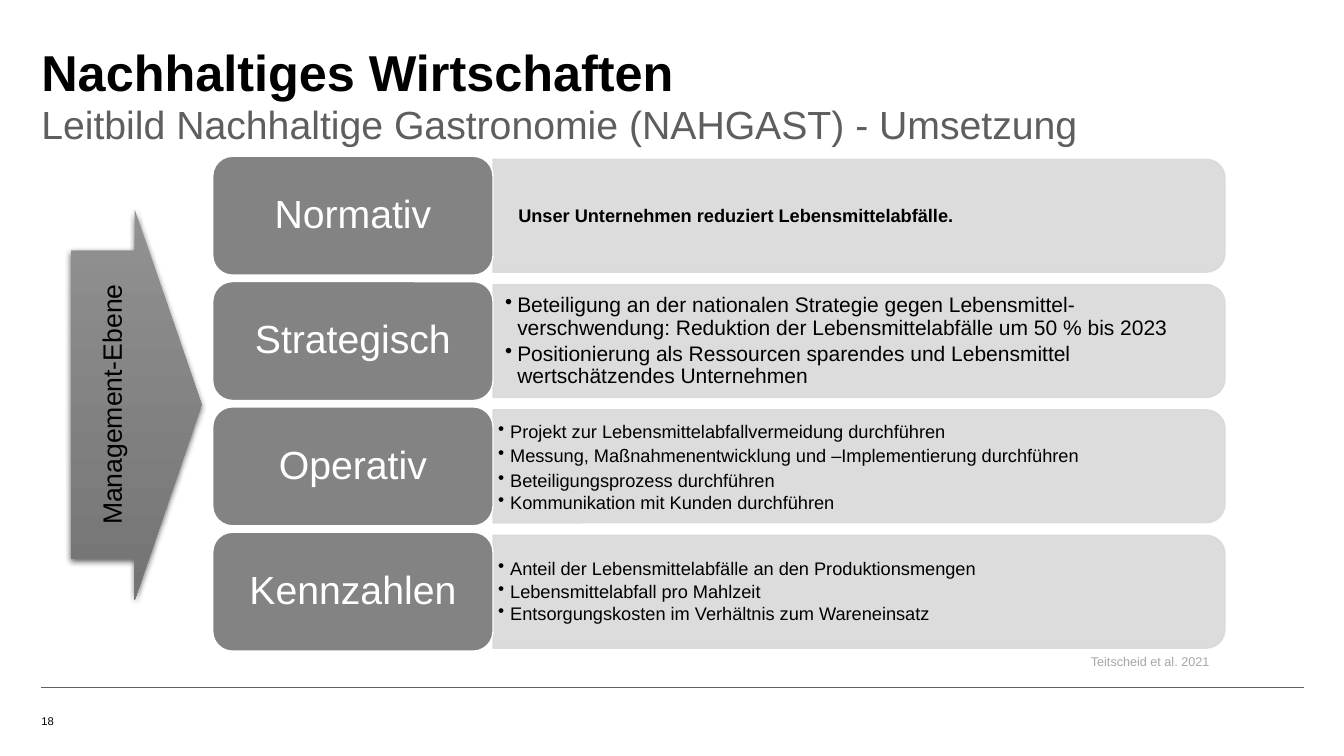
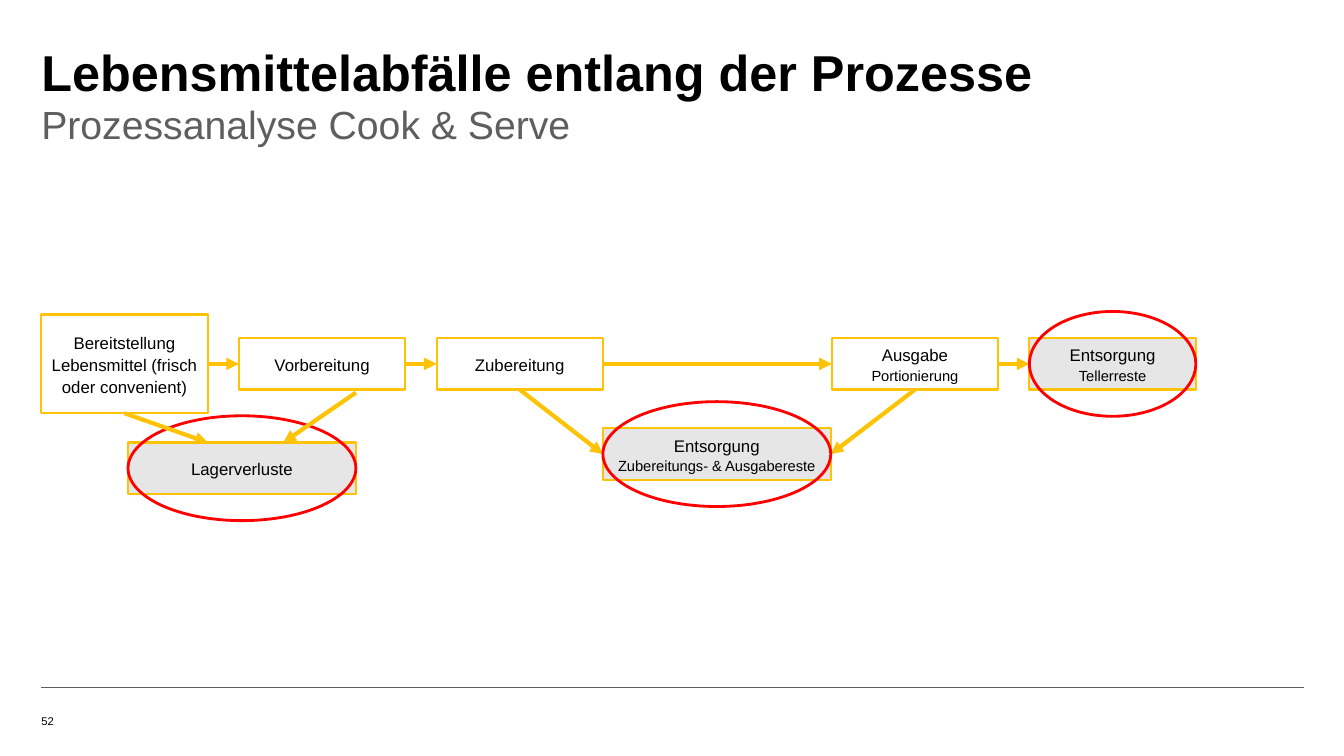
from dataclasses import dataclass

from lxml.etree import SubElement
from pptx import Presentation
from pptx.dml.color import RGBColor
from pptx.enum.shapes import MSO_CONNECTOR, MSO_SHAPE
from pptx.enum.text import MSO_ANCHOR, PP_ALIGN
from pptx.oxml.ns import qn
from pptx.util import Inches, Pt


@dataclass(frozen=True)
class Theme:
    font: str = "Arial"
    black: str = "000000"
    white: str = "FFFFFF"
    subtitle_grey: str = "5E5E5E"
    label_grey: str = "838383"
    panel_grey: str = "D9D9D9"
    waste_grey: str = "E6E6E6"
    source_grey: str = "A6A6A6"
    arrow_top: str = "919191"
    arrow_bottom: str = "747474"
    yellow: str = "FEC306"
    red: str = "FF0000"
    title_size: float = 36
    subtitle_size: float = 28
    label_size: float = 28
    arrow_size: float = 19
    large_size: float = 15
    body_size: float = 13
    step_size: float = 12
    detail_size: float = 10.5
    source_size: float = 9
    number_size: float = 8


THEME = Theme()
NO_INSET = (0, 0)


@dataclass(frozen=True)
class Box:
    left: float
    top: float
    width: float
    height: float

    @property
    def right(self):
        return self.left + self.width

    @property
    def bottom(self):
        return self.top + self.height

    @property
    def center(self):
        return self.left + self.width / 2

    @property
    def middle(self):
        return self.top + self.height / 2

    def inner(self, left, top, width, height):
        return Box(self.left + left, self.top + top, width, height)

    def lengths(self):
        return [Inches(n) for n in (self.left, self.top, self.width, self.height)]


@dataclass(frozen=True)
class Level:
    name: str
    points: tuple
    size: float = THEME.body_size
    bold: bool = False
    bullet: str = "•"
    indent: float = 0.12
    inset: tuple = (0.05, 0.03)
    spacing: float = 0.9


LEVELS = (
    Level("Normativ", ("Unser Unternehmen reduziert Lebensmittelabfälle.",),
          bold=True, bullet="", indent=0.2),
    Level("Strategisch", (
        "Beteiligung an der nationalen Strategie gegen Lebensmittel-verschwendung: "
        "Reduktion der Lebensmittelabfälle um 50 % bis 2023",
        "Positionierung als Ressourcen sparendes und Lebensmittel wertschätzendes Unternehmen",
    ), size=THEME.large_size, inset=(0.12, 0.06)),
    Level("Operativ", (
        "Projekt zur Lebensmittelabfallvermeidung durchführen",
        "Messung, Maßnahmenentwicklung und –Implementierung durchführen",
        "Beteiligungsprozess durchführen",
        "Kommunikation mit Kunden durchführen",
    ), spacing=1.0),
    Level("Kennzahlen", (
        "Anteil der Lebensmittelabfälle an den Produktionsmengen",
        "Lebensmittelabfall pro Mahlzeit",
        "Entsorgungskosten im Verhältnis zum Wareneinsatz",
    )),
)


def write(frame, paragraphs, *, size, color=THEME.black, bold=False, align=PP_ALIGN.LEFT,
          anchor=MSO_ANCHOR.TOP, inset=(0.1, 0.05), spacing=1.0, after=0,
          indent=0, bullet="", detail_size=None):
    frame.word_wrap = True
    frame.vertical_anchor = anchor
    frame.margin_left = frame.margin_right = Inches(inset[0])
    frame.margin_top = frame.margin_bottom = Inches(inset[1])
    for index, content in enumerate(paragraphs):
        paragraph = frame.add_paragraph() if index else frame.paragraphs[0]
        paragraph.alignment = align
        paragraph.line_spacing = spacing
        paragraph.space_after = Pt(after)
        for row, line in enumerate(content.split("\n")):
            if row:
                paragraph.add_line_break()
            run = paragraph.add_run()
            run.text = line
            run.font.name = THEME.font
            run.font.size = Pt(detail_size if row and detail_size else size)
            run.font.bold = bold
            run.font.color.rgb = RGBColor.from_string(color)
        if indent:
            properties = paragraph._p.get_or_add_pPr()
            properties.set("marL", str(Inches(indent)))
            properties.set("indent", str(-Inches(indent) if bullet else 0))
            if bullet:
                SubElement(properties, qn("a:buChar")).set("char", bullet)


def add_text(slide, box, paragraphs, **format):
    frame = slide.shapes.add_textbox(*box.lengths()).text_frame
    write(frame, paragraphs, **format)
    return frame


def add_shape(slide, kind, box, fill=None, line=None, width=1.0):
    shape = slide.shapes.add_shape(kind, *box.lengths())
    shape.shadow.inherit = False
    if fill:
        shape.fill.solid()
        shape.fill.fore_color.rgb = RGBColor.from_string(fill)
    else:
        shape.fill.background()
    if line:
        shape.line.color.rgb = RGBColor.from_string(line)
        shape.line.width = Pt(width)
    else:
        shape.line.fill.background()
    return shape


def add_line(slide, start, end, color, width, arrow=False):
    line = slide.shapes.add_connector(
        MSO_CONNECTOR.STRAIGHT, *[Inches(n) for n in (*start, *end)])
    line.line.color.rgb = RGBColor.from_string(color)
    line.line.width = Pt(width)
    if arrow:
        SubElement(line.line._get_or_add_ln(), qn("a:tailEnd")).set("type", "triangle")
    SubElement(line._element.spPr, qn("a:effectLst"))


def add_frame(deck, title, subtitle, number):
    slide = deck.slides.add_slide(deck.slide_layouts[6])
    add_line(slide, (0.41, 6.82), (12.93, 6.82), THEME.subtitle_grey, 0.5)
    add_text(slide, Box(0.41, 6.9, 1.57, 0.32), [number], size=THEME.number_size,
             anchor=MSO_ANCHOR.BOTTOM, inset=NO_INSET)
    add_text(slide, Box(0.41, 0.41, 11.35, 0.62), [title], size=THEME.title_size,
             bold=True, inset=NO_INSET)
    add_text(slide, Box(0.41, 0.95, 11.35, 0.55), [subtitle], size=THEME.subtitle_size,
             color=THEME.subtitle_grey, inset=NO_INSET, spacing=1.1)
    return slide


def add_management_arrow(slide, box):
    arrow = add_shape(slide, MSO_SHAPE.RIGHT_ARROW, box)
    arrow.adjustments[0], arrow.adjustments[1] = 0.79, 0.51
    arrow.fill.gradient()
    arrow.fill.gradient_angle = 270
    for stop, color in zip(arrow.fill.gradient_stops, (THEME.arrow_top, THEME.arrow_bottom)):
        stop.color.rgb = RGBColor.from_string(color)
    effects = arrow._element.spPr.find(qn("a:effectLst"))
    shadow = SubElement(effects, qn("a:outerShdw"), blurRad=str(Pt(4.5)),
                        dist=str(Pt(1.5)), dir="5400000", rotWithShape="0")
    shade = SubElement(shadow, qn("a:srgbClr"), val=THEME.black)
    SubElement(shade, qn("a:alpha"), val="63000")
    write(arrow.text_frame, ["Management-Ebene"], size=THEME.arrow_size,
          align=PP_ALIGN.CENTER, anchor=MSO_ANCHOR.MIDDLE, spacing=1.1)
    arrow.text_frame._txBody.bodyPr.set("vert", "vert270")


def add_level(slide, box, level):
    label_box = box.inner(0, 0, 2.78, box.height)
    width, height = box.width - label_box.width, 1.12
    panel_center = label_box.right + width / 2
    panel = add_shape(
        slide, MSO_SHAPE.ROUND_2_SAME_RECTANGLE,
        Box(panel_center - height / 2, box.middle - width / 2, height, width),
        THEME.panel_grey, THEME.panel_grey)
    panel.rotation = 90
    for color in panel._element.spPr.iter(qn("a:srgbClr")):
        SubElement(color, qn("a:alpha")).set("val", "90000")
    points = add_text(
        slide, box.inner(label_box.width, 0.09, width - 0.05, 1.01), level.points,
        size=level.size, bold=level.bold, anchor=MSO_ANCHOR.MIDDLE, inset=level.inset,
        spacing=level.spacing, after=level.size * 0.15, indent=level.indent,
        bullet=level.bullet)
    points.paragraphs[-1].line_spacing = 0.9
    label = add_shape(slide, MSO_SHAPE.ROUNDED_RECTANGLE, label_box,
                      THEME.label_grey, THEME.white)
    write(label.text_frame, [level.name], size=THEME.label_size, color=THEME.white,
          align=PP_ALIGN.CENTER, anchor=MSO_ANCHOR.MIDDLE, spacing=0.9)


def add_levels(slide, box):
    height = 1.18
    pitch = (box.height - height) / (len(LEVELS) - 1)
    for index, level in enumerate(LEVELS):
        add_level(slide, box.inner(0, index * pitch, box.width, height), level)


def add_step(slide, box, label, fill=THEME.white):
    step = add_shape(slide, MSO_SHAPE.RECTANGLE, box, fill, THEME.yellow, 1.5)
    write(step.text_frame, [label], size=THEME.step_size, align=PP_ALIGN.CENTER,
          anchor=MSO_ANCHOR.MIDDLE, spacing=1.1, detail_size=THEME.detail_size)
    return box


def add_flow(slide, start, end):
    add_line(slide, start, end, THEME.yellow, 3, arrow=True)


def add_ring(slide, box):
    height = 1.04
    add_shape(slide, MSO_SHAPE.OVAL,
              Box(box.left, box.middle - height / 2, box.width, height),
              line=THEME.red, width=2)


def add_process(slide, box):
    width, height, pitch, waste_width = 1.65, 0.51, 1.96, 2.26

    def step(column, label, fill=THEME.white, tall=height):
        place = box.inner(column * pitch, (box.height - tall) / 2, width, tall)
        return add_step(slide, place, label, fill)

    def waste(left, top, label):
        place = box.inner(left, top, waste_width, height)
        return add_step(slide, place, label, THEME.waste_grey)

    supply = step(0, "Bereitstellung Lebensmittel (frisch oder convenient)", tall=box.height)
    preparation = step(1, "Vorbereitung")
    cooking = step(2, "Zubereitung")
    serving = step(4, "Ausgabe\nPortionierung")
    plate_waste = step(5, "Entsorgung\nTellerreste", THEME.waste_grey)
    kitchen_waste = waste(5.57, 1.13, "Entsorgung\nZubereitungs- & Ausgabereste")

    stations = (supply, preparation, cooking, serving, plate_waste)
    for source, target in zip(stations, stations[1:]):
        add_flow(slide, (source.right, box.middle), (target.left, box.middle))
    add_flow(slide, (cooking.center, cooking.bottom), (kitchen_waste.left, kitchen_waste.middle))
    add_flow(slide, (serving.center, serving.bottom), (kitchen_waste.right, kitchen_waste.middle))
    add_ring(slide, plate_waste)
    add_ring(slide, kitchen_waste)

    storage_loss = waste(0.86, 1.27, "Lagerverluste")
    add_ring(slide, storage_loss)
    add_flow(slide, (supply.center, supply.bottom), (storage_loss.left + 0.79, storage_loss.top))
    add_flow(slide, (storage_loss.right, preparation.bottom + 0.03),
             (storage_loss.right - 0.72, storage_loss.top))


def build_guideline(deck):
    slide = add_frame(deck, "Nachhaltiges Wirtschaften",
                      "Leitbild Nachhaltige Gastronomie (NAHGAST) - Umsetzung", "18")
    add_management_arrow(slide, Box(0.7, 2.08, 1.3, 3.87))
    add_levels(slide, Box(2.11, 1.55, 10.04, 4.91))
    add_text(slide, Box(10.8, 6.47, 1.76, 0.17), ["Teitscheid et al. 2021"],
             size=THEME.source_size, color=THEME.source_grey, inset=(0, 0.02), indent=0.02)


def build_process(deck):
    slide = add_frame(deck, "Lebensmittelabfälle entlang der Prozesse",
                      "Prozessanalyse Cook & Serve", "52")
    add_process(slide, Box(0.41, 3.12, 11.45, 0.98))


def main():
    deck = Presentation()
    deck.slide_width, deck.slide_height = Inches(13.33), Inches(7.5)
    build_guideline(deck)
    build_process(deck)
    deck.save("out.pptx")


if __name__ == "__main__":
    main()
